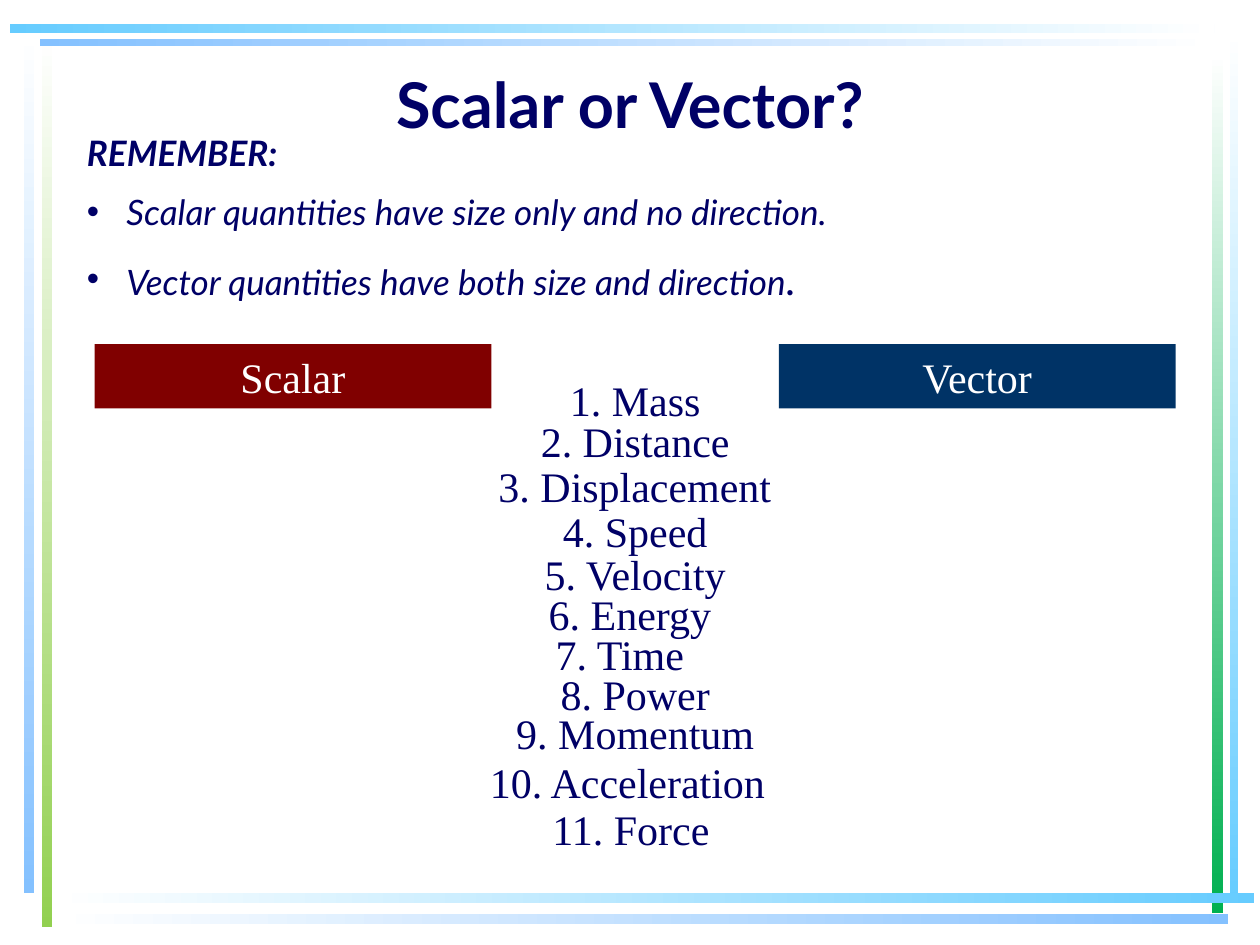
from dataclasses import dataclass

import pptx
import pptx.dml.color
import pptx.enum.shapes
import pptx.enum.text
import pptx.oxml
import pptx.util

Pt = pptx.util.Pt
ALIGN = pptx.enum.text.PP_ALIGN
ANCHOR = pptx.enum.text.MSO_ANCHOR
RECTANGLE = pptx.enum.shapes.MSO_SHAPE.RECTANGLE

COLORS = {
    "white": "FFFFFF",
    "navy": "000066",
    "maroon": "800000",
    "deep blue": "003366",
    "sky": "66CCFF",
    "pale blue": "84C1FF",
    "lime": "92D050",
    "green": "00B050",
}


@dataclass
class Box:
    left: float
    top: float
    width: float
    height: float


@dataclass
class Bar:
    box: Box
    start: str
    end: str


@dataclass
class Header:
    text: str
    left: float
    fill: str


@dataclass
class Quantity:
    name: str
    top: float
    left: float = 281
    width: float = 164


BARS = [
    Bar(Box(23.8, 20.2, 5.8, 509.8), "white", "lime"),
    Bar(Box(13.7, 18, 5.8, 492.5), "white", "pale blue"),
    Bar(Box(702.7, 17.3, 5, 499), "white", "sky"),
    Bar(Box(692.6, 30.2, 6.5, 491.8), "white", "green"),
    Bar(Box(32.4, 510.5, 684, 5.8), "white", "sky"),
    Bar(Box(32.4, 522, 669.6, 5.8), "white", "pale blue"),
    Bar(Box(23, 22.3, 671, 4.3), "pale blue", "white"),
    Bar(Box(5.8, 13.7, 688.3, 5), "sky", "white"),
]
HEADERS = [Header("Scalar", 54, "maroon"), Header("Vector", 445, "deep blue")]
QUANTITIES = [
    Quantity("Mass", 210.2),
    Quantity("Distance", 233.3),
    Quantity("Displacement", 259.2, 260.6, 204.5),
    Quantity("Speed", 285.1),
    Quantity("Velocity", 309.6),
    Quantity("Energy", 332.6, 278),
    Quantity("Time", 355, 272.2),
    Quantity("Power", 378),
    Quantity("Momentum", 400.3),
    Quantity("Acceleration", 428.4, 272.2, 172.8),
    Quantity("Force", 455, 278.6),
]
REMINDERS = [
    "REMEMBER:",
    "Scalar quantities have size only and no direction.",
    "Vector quantities have both size and direction",
]


def rgb(name: str) -> pptx.dml.color.RGBColor:
    return pptx.dml.color.RGBColor.from_string(COLORS[name])


def place(shape, box: Box) -> None:
    shape.left, shape.top = Pt(box.left), Pt(box.top)
    shape.width, shape.height = Pt(box.width), Pt(box.height)


def style(span, font: str, size: float, color: str = "navy",
          bold: bool = False, italic: bool = False) -> None:
    span.font.name = font
    span.font.size = Pt(size)
    span.font.bold = bold
    span.font.italic = italic
    span.font.color.rgb = rgb(color)


def add_rectangle(page, box: Box):
    shape = page.shapes.add_shape(
        RECTANGLE, Pt(box.left), Pt(box.top), Pt(box.width), Pt(box.height))
    shape.shadow.inherit = False
    shape.line.fill.background()
    return shape


def add_bar(page, bar: Bar) -> None:
    shape = add_rectangle(page, bar.box)
    shape.fill.gradient()
    shape.fill.gradient_angle = 270 if bar.box.height > bar.box.width else 0
    for stop, color in zip(shape.fill.gradient_stops, (bar.start, bar.end)):
        stop.color.rgb = rgb(color)


def set_label(shape, text: str, color: str) -> None:
    frame = shape.text_frame
    frame.word_wrap = True
    frame.vertical_anchor = ANCHOR.MIDDLE
    frame.text = text
    para = frame.paragraphs[0]
    para.alignment = ALIGN.CENTER
    style(para.runs[0], "Times New Roman", 24, color)


def add_header(page, header: Header) -> None:
    shape = add_rectangle(page, Box(header.left, 196.6, 226.8, 36.7))
    shape.fill.solid()
    shape.fill.fore_color.rgb = rgb(header.fill)
    set_label(shape, header.text, "white")


def add_quantity(page, number: int, quantity: Quantity) -> None:
    box = page.shapes.add_textbox(
        Pt(quantity.left), Pt(quantity.top), Pt(quantity.width), Pt(36.7))
    set_label(box, f"{number}. {quantity.name}", "navy")


def fill_title(title) -> None:
    place(title, Box(36, -5.8, 648, 90))
    frame = title.text_frame
    frame.auto_size = pptx.enum.text.MSO_AUTO_SIZE.NONE
    frame.vertical_anchor = ANCHOR.BOTTOM
    frame.text = "Scalar or Vector?"
    para = frame.paragraphs[0]
    para.alignment = ALIGN.CENTER
    style(para.runs[0], "Lato", 36, bold=True)


def set_indent(para, bulleted: bool) -> None:
    properties = para._p.get_or_add_pPr()
    indent = Pt(22.5) if bulleted else 0
    properties.set("marL", str(indent))
    properties.set("indent", str(-indent))
    tag = '<a:buChar {} char="•"/>' if bulleted else "<a:buNone {}/>"
    properties.append(pptx.oxml.parse_xml(
        tag.format(pptx.oxml.ns.nsdecls("a"))))


def fill_reminders(body) -> None:
    place(body, Box(42.5, 71.3, 629.3, 111.6))
    frame = body.text_frame
    frame.auto_size = pptx.enum.text.MSO_AUTO_SIZE.NONE
    frame.vertical_anchor = ANCHOR.TOP
    frame.text = "\n".join(REMINDERS)
    for index, para in enumerate(frame.paragraphs):
        para.space_before = Pt((0, 10, 12)[index])
        set_indent(para, index > 0)
        style(para.runs[0], "Lato", 20, bold=index == 0, italic=True)
    period = frame.paragraphs[-1].add_run()
    period.text = "."
    style(period, "Lato", 24, italic=True)


def main() -> None:
    deck = pptx.Presentation()
    deck.slide_width, deck.slide_height = Pt(720), Pt(540)
    page = deck.slides.add_slide(deck.slide_layouts[1])
    for bar in BARS:
        add_bar(page, bar)
    fill_title(page.shapes.title)
    fill_reminders(page.placeholders[1])
    for header in HEADERS:
        add_header(page, header)
    for number, quantity in enumerate(QUANTITIES, 1):
        add_quantity(page, number, quantity)
    deck.save("out.pptx")


if __name__ == "__main__":
    main()
